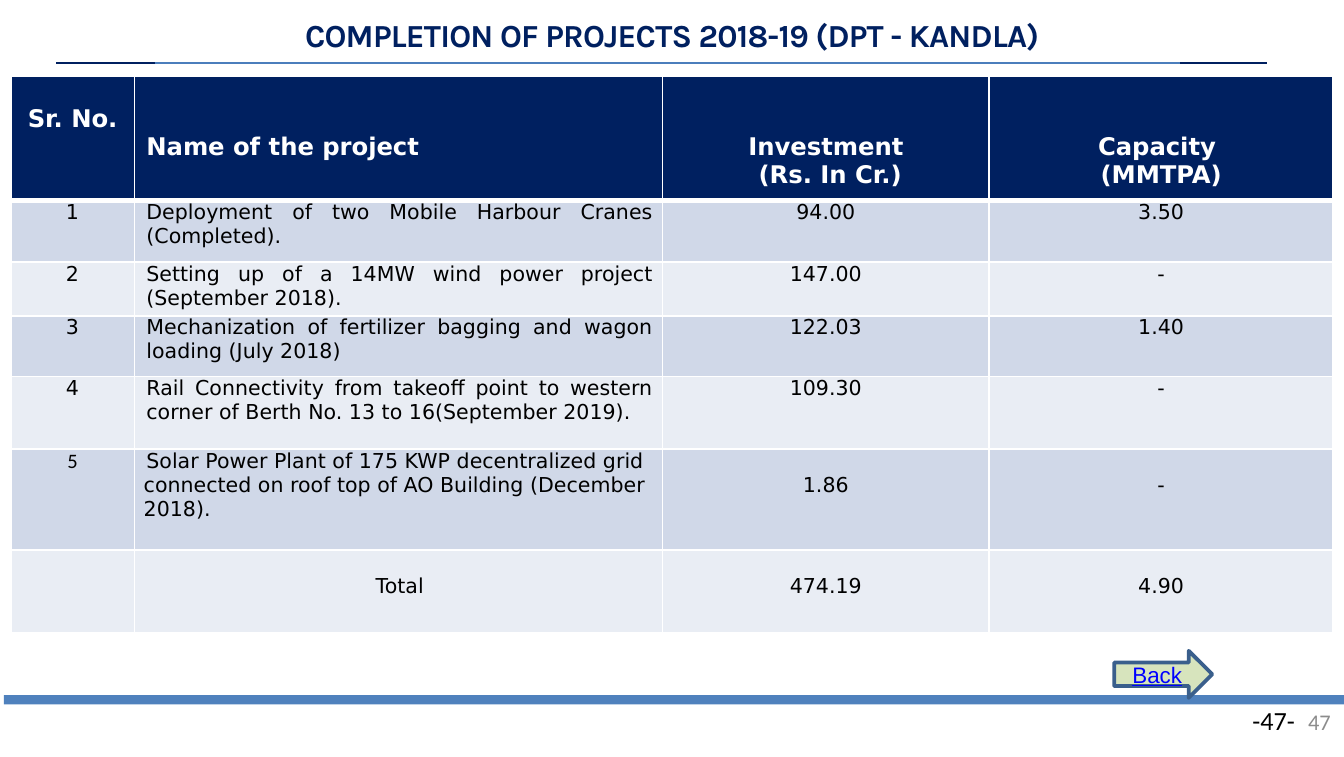
from dataclasses import dataclass

from lxml import etree
from pptx import Presentation
from pptx import util as u
from pptx.dml.color import RGBColor
from pptx.enum import shapes, text
from pptx.oxml.ns import qn


@dataclass(frozen=True)
class Theme:
    navy: str = "002060"
    white: str = "FFFFFF"
    black: str = "000000"
    gray: str = "8C8C8C"
    link: str = "0000FF"
    rule: str = "4B7EBC"
    bar: str = "4F81BD"
    arrow: str = "D7E4BD"
    arrow_edge: str = "3A5F8C"
    bands: tuple = ("D0D8E8", "E9EDF4")
    table_font: str = "DejaVu Sans"
    title_size: float = 17.2
    header_size: float = 13
    body_size: float = 11
    small_size: float = 12
    page_size: float = 14


THEME = Theme()
LEFT, CENTER, RIGHT, JUSTIFY = (text.PP_ALIGN.LEFT, text.PP_ALIGN.CENTER,
                                text.PP_ALIGN.RIGHT, text.PP_ALIGN.JUSTIFY)
HEADER_LINE, BODY_LINE = 0.21, 0.18  # height of one text line in the table

COLUMNS = [0.92, 3.93, 2.43, 2.56]
ROWS = [0.92, 0.46, 0.4, 0.45, 0.54, 0.75, 0.62]
HEADERS = ["Sr. No.", "Name of the project",
           "Investment\n (Rs. In Cr.)", "Capacity \n(MMTPA)"]
PROJECTS = [
    ("1", "Deployment of two Mobile Harbour Cranes (Completed).", "94.00", "3.50"),
    ("2", "Setting up of a 14MW wind power project (September 2018).", "147.00", "-"),
    ("3", "Mechanization of fertilizer bagging and wagon loading (July 2018)",
     "122.03", "1.40"),
    ("4", "Rail Connectivity from takeoff point to western corner of Berth "
          "No. 13 to 16(September 2019).", "109.30", "-"),
    ("5", "Solar Power Plant of 175 KWP decentralized grid connected on roof top "
          "of AO Building (December 2018).", "1.86", "-"),
    ("", "Total", "474.19", "4.90"),
]


def inches(*lengths):
    return [u.Inches(length) for length in lengths]


def write(frame, words, align, color, spacing=None, indent=None, **font):
    """Write one paragraph per line of words; font holds font attributes."""
    for index, line in enumerate(words.split("\n")):
        para = frame.paragraphs[0] if index == 0 else frame.add_paragraph()
        para.alignment = align
        if indent:
            margin, first = inches(*indent)
            properties = para._p.get_or_add_pPr()
            properties.set("marL", str(margin))
            properties.set("indent", str(first))
        span = para.add_run()
        span.text = line
        for name, value in font.items():
            setattr(span.font, name, u.Pt(value) if name == "size" else value)
        span.font.color.rgb = RGBColor.from_string(color)
        if spacing:
            para.line_spacing = spacing


def set_frame(frame, **values):
    for name, value in values.items():
        setattr(frame, name, value)


def add_text(page, place, words, align, color, frame_values, **font):
    box = page.shapes.add_textbox(*inches(*place))
    set_frame(box.text_frame, **frame_values)
    write(box.text_frame, words, align, color, **font)
    return box


def add_shape(page, kind, place, fill, edge=None, width=0):
    shape = page.shapes.add_shape(kind, *inches(*place))
    shape.shadow.inherit = False
    shape.fill.solid()
    shape.fill.fore_color.rgb = RGBColor.from_string(fill)
    if edge:
        shape.line.color.rgb = RGBColor.from_string(edge)
        shape.line.width = u.Pt(width)
    else:
        shape.line.fill.background()
    return shape


def add_rule(page, start, end, y, color):
    rule = page.shapes.add_connector(shapes.MSO_CONNECTOR.STRAIGHT,
                                     *inches(start, y, end, y))
    rule.line.color.rgb = RGBColor.from_string(color)
    rule.line.width = u.Pt(0.75)
    etree.SubElement(rule._element.spPr, qn("a:effectLst"))


def style_cell(cell, fill, top=1, bottom=1):
    """Set white borders first, then the fill, as the schema orders them."""
    properties = cell._tc.get_or_add_tcPr()
    for side, width in {"L": 1, "R": 1, "T": top, "B": bottom}.items():
        border = etree.SubElement(properties, qn(f"a:ln{side}"), w=str(u.Pt(width)))
        solid = etree.SubElement(border, qn("a:solidFill"))
        etree.SubElement(solid, qn("a:srgbClr"), val=THEME.white)
    cell.fill.solid()
    cell.fill.fore_color.rgb = RGBColor.from_string(fill)


def fill_cell(cell, words, align, color, offset=0, **font):
    left, top = inches(0.07, offset)
    set_frame(cell, margin_left=left, margin_right=left, margin_top=top, margin_bottom=0)
    if words:
        write(cell.text_frame, words, align, color, **font)


def add_projects_table(page):
    frame = page.shapes.add_table(len(ROWS), len(COLUMNS),
                                  *inches(0.08, 0.57, sum(COLUMNS), sum(ROWS)))
    table = frame.table
    for column, width in zip(table.columns, COLUMNS):
        column.width = u.Inches(width)
    for row, height in zip(table.rows, ROWS):
        row.height = u.Inches(height)

    # Header row: the first heading sits one line higher
    for col, words in enumerate(HEADERS):
        cell = table.cell(0, col)
        style_cell(cell, THEME.navy, bottom=3)
        fill_cell(cell, words, LEFT if col == 1 else CENTER, THEME.white,
                  HEADER_LINE * (1 if col == 0 else 2),
                  indent=(0, 0.02) if col == 1 else None,
                  name=THEME.table_font, size=THEME.header_size, bold=True)

    # Body rows: the figures of the last two rows start one line lower
    for row, values in enumerate(PROJECTS, start=1):
        solar, total = row == 5, row == 6
        for col, words in enumerate(values):
            cell = table.cell(row, col)
            style_cell(cell, THEME.bands[(row - 1) % 2], top=3 if row == 1 else 1)
            align, indent = CENTER, None
            if col == 1:
                align = CENTER if total else LEFT if solar else JUSTIFY
                indent = (0, 0.02) if solar else (0.02, 0)
            lowered = total or (solar and col > 1)
            fill_cell(cell, words, align, THEME.black, BODY_LINE if lowered else 0,
                      indent=indent, size=THEME.body_size, bold=False,
                      name="Calibri" if solar and col == 0 else THEME.table_font)


def main():
    deck = Presentation()
    deck.slide_width, deck.slide_height = inches(10, 5.63)
    page = deck.slides.add_slide(deck.slide_layouts[6])
    side, edge = inches(0.09, 0.04)
    insets = dict(margin_left=side, margin_right=side, margin_top=edge,
                  margin_bottom=edge, word_wrap=True)

    # Page frame
    add_text(page, (9.22, 5.19, 0.55, 0.34), "-47-", LEFT, THEME.black,
             dict(word_wrap=False), name="Calibri", size=THEME.page_size)
    add_shape(page, shapes.MSO_SHAPE.RECTANGLE, (0.03, 5.17, 9.97, 0.07), THEME.bar)
    add_rule(page, 0.42, 9.43, 0.47, THEME.navy)

    add_projects_table(page)

    # Title, with slightly tightened letters
    title = add_text(page, (0, 0.15, 10, 0.3),
                     "COMPLETION OF PROJECTS 2018-19 (DPT - KANDLA)", CENTER,
                     THEME.navy, insets, spacing=0.7,
                     name="Karla", size=THEME.title_size, bold=True)
    title.text_frame.paragraphs[0].runs[0]._r.get_or_add_rPr().set("spc", "-40")
    add_rule(page, 1.15, 8.78, 0.47, THEME.rule)

    # Back arrow and slide number
    middle = text.MSO_ANCHOR.MIDDLE
    arrow = add_shape(page, shapes.MSO_SHAPE.RIGHT_ARROW, (8.29, 4.84, 0.73, 0.35),
                      THEME.arrow, THEME.arrow_edge, 2)
    set_frame(arrow.text_frame, vertical_anchor=middle, **insets)
    write(arrow.text_frame, "Back", CENTER, THEME.link,
          name="Arial", size=THEME.small_size, underline=True)
    add_text(page, (7.67, 5.22, 2.33, 0.3), "47", RIGHT, THEME.gray,
             dict(word_wrap=True, vertical_anchor=middle),
             name="Calibri", size=THEME.small_size)

    deck.save("out.pptx")


if __name__ == "__main__":
    main()
